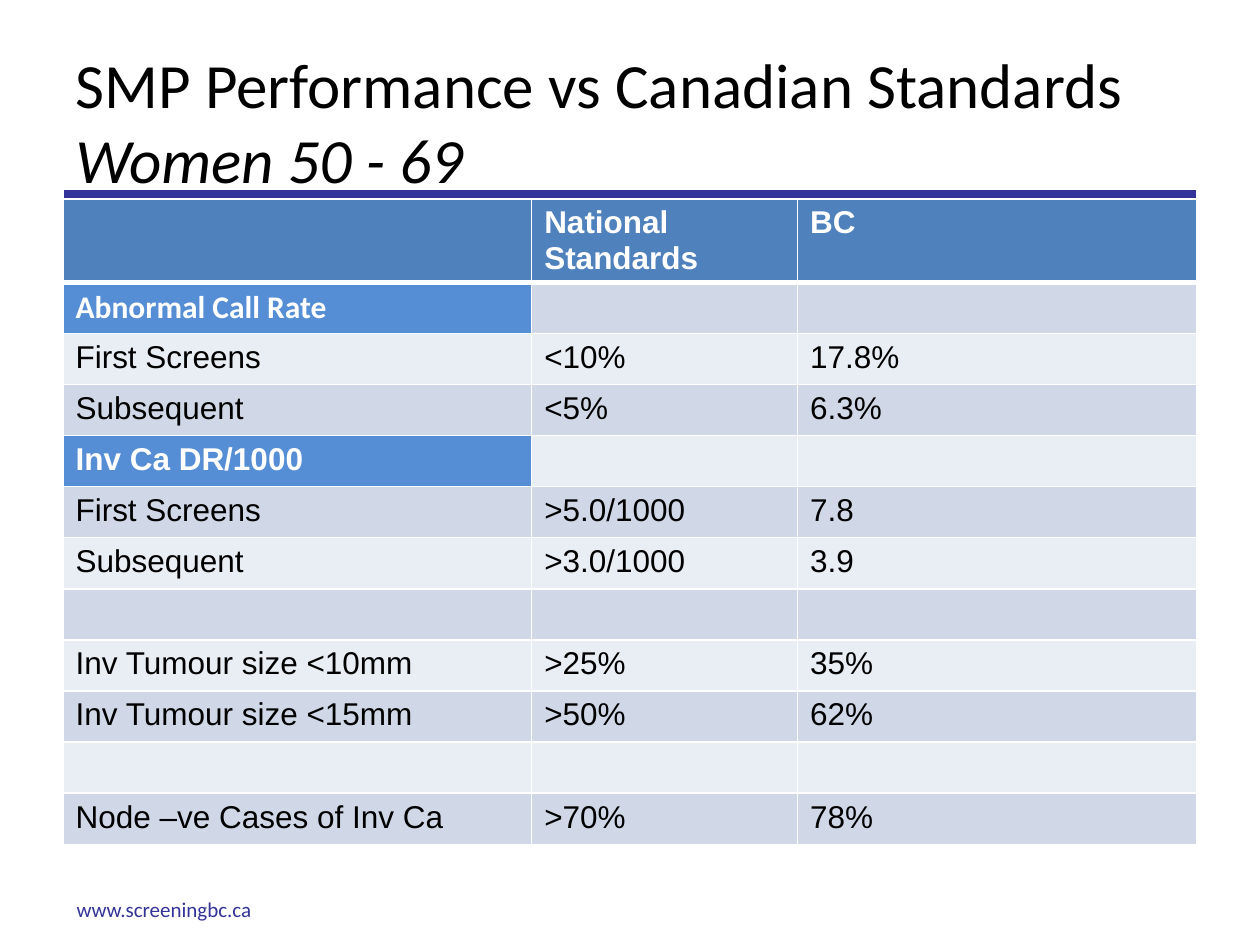
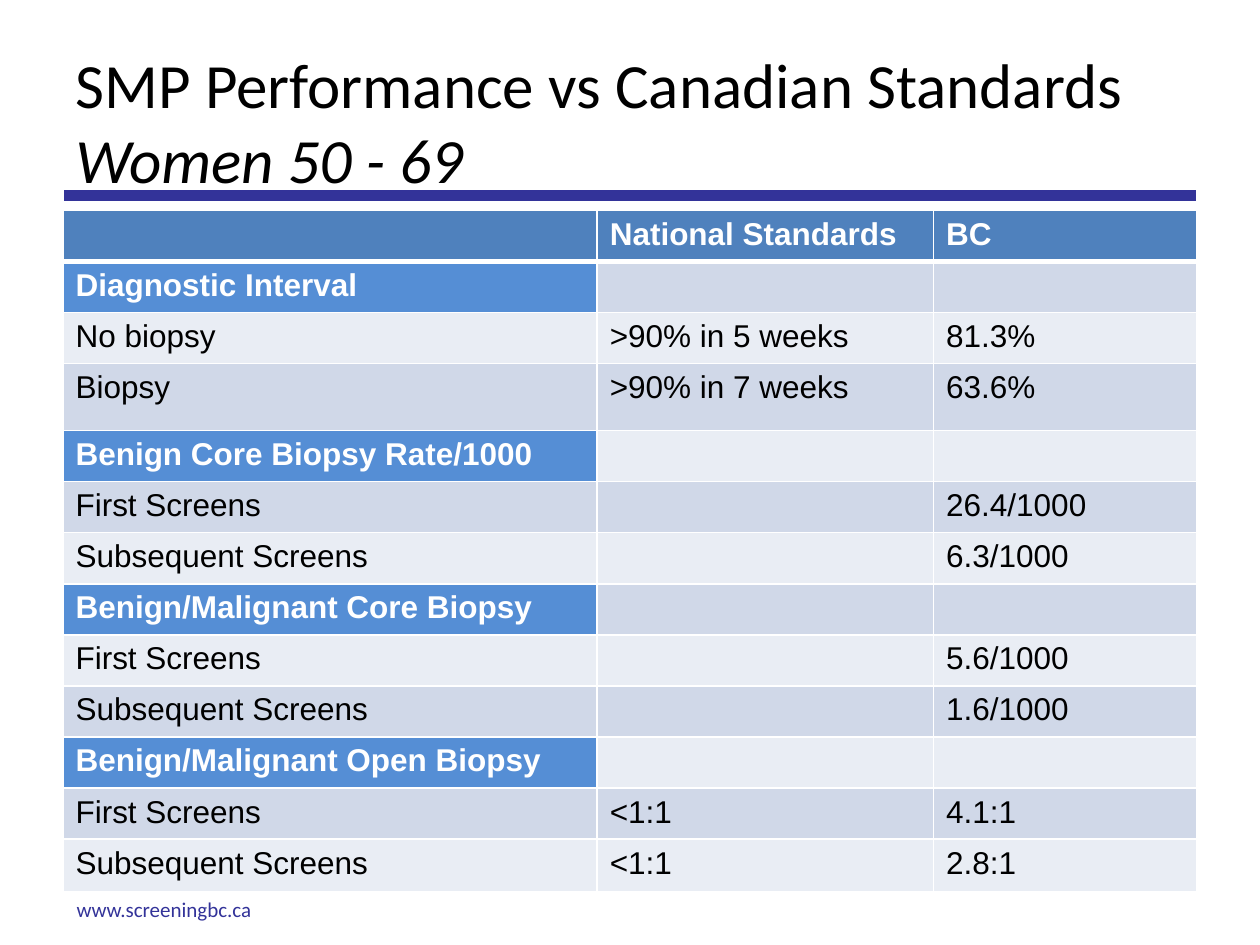
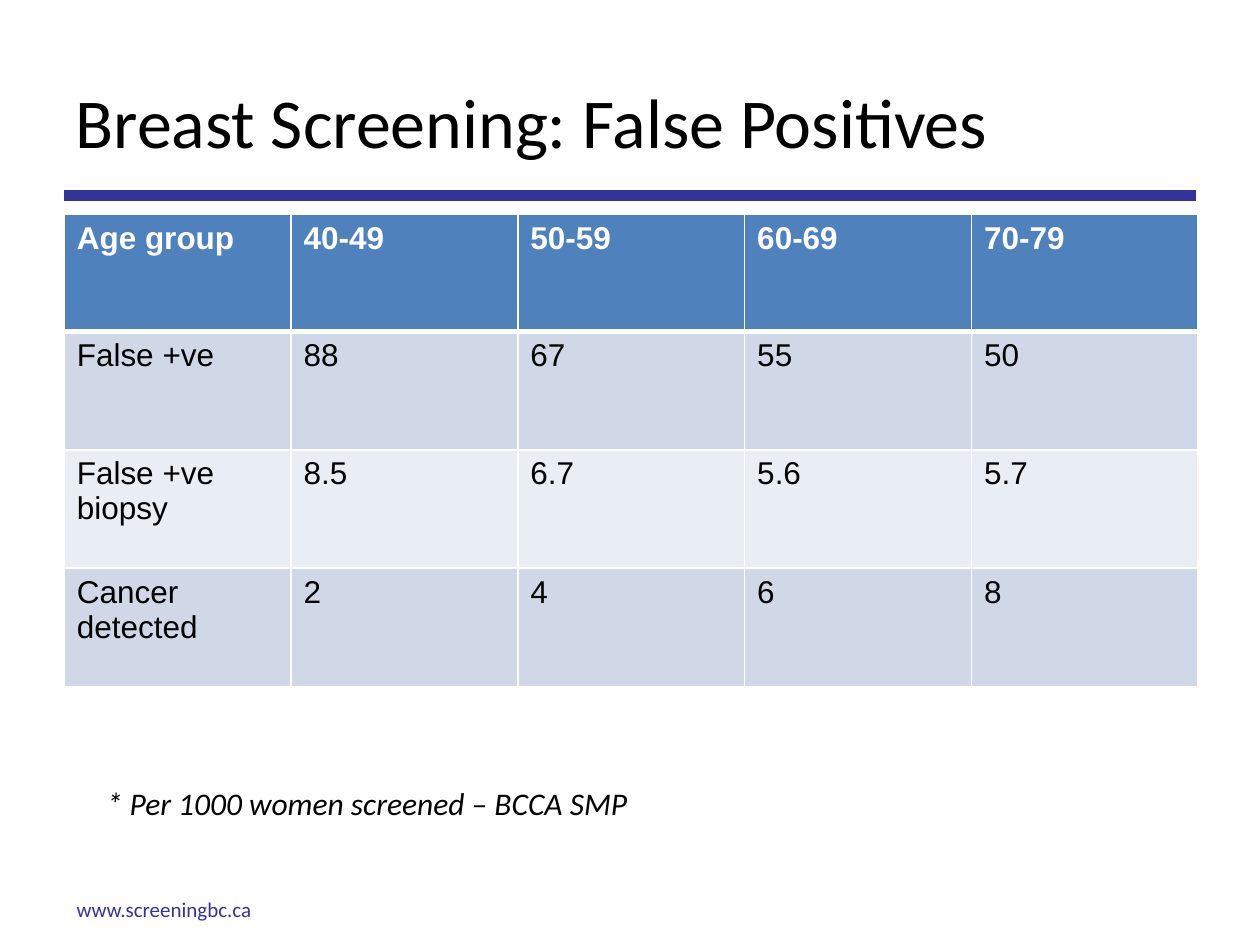
from itertools import zip_longest

from lxml.etree import SubElement
from pptx import Presentation
from pptx.dml.color import RGBColor
from pptx.enum.shapes import MSO_CONNECTOR
from pptx.enum.text import MSO_ANCHOR, MSO_AUTO_SIZE, PP_ALIGN
from pptx.oxml.ns import qn
from pptx.util import Inches, Pt

BLACK = RGBColor(0x00, 0x00, 0x00)
WHITE = RGBColor(0xFF, 0xFF, 0xFF)
INDIGO = RGBColor(0x33, 0x33, 0x99)
HEADER_BLUE = RGBColor(0x4F, 0x81, 0xBD)
SECTION_BLUE = RGBColor(0x55, 0x8E, 0xD5)
BANDS = (RGBColor(0xE9, 0xED, 0xF4), RGBColor(0xD0, 0xD8, 0xE8))

HEADING_FONT = "Calibri"
TABLE_FONT = "Arial"
ROW_HEIGHT = Inches(4.87) // 12
STANDARDS_TITLE = ("SMP Performance vs Canadian Standards ", "Women 50 - 69")
STANDARDS_HEADER = ["", "National Standards", "BC"]

RATE_ROWS = [
    STANDARDS_HEADER,
    ["Abnormal Call Rate"],
    ["First Screens", "<10%", "17.8%"],
    ["Subsequent", "<5%", "6.3%"],
    ["Inv Ca DR/1000"],
    ["First Screens", ">5.0/1000", "7.8"],
    ["Subsequent", ">3.0/1000", "3.9"],
    [],
    ["Inv Tumour size <10mm", ">25%", "35%"],
    ["Inv Tumour size <15mm", ">50%", "62%"],
    [],
    ["Node –ve Cases of Inv Ca", ">70%", "78%"],
]
BIOPSY_ROWS = [
    STANDARDS_HEADER,
    ["Diagnostic Interval"],
    ["No biopsy", ">90% in 5 weeks", "81.3%"],
    ["Biopsy", ">90% in 7 weeks", "63.6%"],
    ["Benign Core Biopsy Rate/1000"],
    ["First Screens", "", "26.4/1000"],
    ["Subsequent Screens", "", "6.3/1000"],
    ["Benign/Malignant Core Biopsy"],
    ["First Screens", "", "5.6/1000"],
    ["Subsequent Screens", "", "1.6/1000"],
    ["Benign/Malignant Open Biopsy"],
    ["First Screens", "<1:1", "4.1:1"],
    ["Subsequent Screens", "<1:1", "2.8:1"],
]
FALSE_POSITIVE_ROWS = [
    ["Age group", "40-49", "50-59", "60-69", "70-79"],
    ["False +ve", "88", "67", "55", "50"],
    ["False +ve\nbiopsy", "8.5", "6.7", "5.6", "5.7"],
    ["Cancer detected", "2", "4", "6", "8"],
]


def write(para, text, size=18, font=TABLE_FONT, color=BLACK, bold=False, italic=False):
    """Add one formatted span to a paragraph."""
    span = para.add_run()
    span.text = text
    span.font.size = Pt(size)
    span.font.name = font
    span.font.color.rgb = color
    span.font.bold = bold
    span.font.italic = italic


def add_label(page, text, left, top, width, height, **style):
    """Place a wrapping line of text in its own box."""
    box = page.shapes.add_textbox(left, top, width, height)
    box.text_frame.word_wrap = True
    write(box.text_frame.paragraphs[0], text, font=HEADING_FONT, **style)
    return box


def move_frame_to_master(deck, page):
    """Build the footer address and title rule, and put them on the master."""
    footer = add_label(page, "www.screeningbc.ca", Inches(0.51), Inches(7.07),
                       Inches(2.36), Inches(0.3), size=12, color=INDIGO)
    rule = page.shapes.add_connector(MSO_CONNECTOR.STRAIGHT, Inches(0.51), Inches(1.55),
                                     Inches(9.49), Inches(1.55))
    rule.line.color.rgb = INDIGO
    rule.line.width = Pt(6)
    SubElement(rule.element.spPr, qn("a:effectLst"))
    for shape in (footer, rule):
        deck.slide_master.element.cSld.spTree.append(shape.element)


def add_page(deck, title, subtitle="", size=36):
    """Add a page with a left-aligned title and an optional italic subtitle."""
    page = deck.slides.add_slide(deck.slide_layouts[5])
    box = page.shapes.title
    box.left, box.top, box.width, box.height = map(Inches, (0.5, 0.42, 9, 1.08))
    frame = box.text_frame
    frame.auto_size = MSO_AUTO_SIZE.NONE
    frame.vertical_anchor = MSO_ANCHOR.MIDDLE
    para = frame.paragraphs[0]
    para.alignment = PP_ALIGN.LEFT
    write(para, title, size=size, font=HEADING_FONT)
    if subtitle:
        write(para, subtitle, size=size, font=HEADING_FONT, italic=True)
    return page


def set_borders(cell, top, bottom):
    """Draw white cell borders, one point wide at the sides."""
    properties = cell._tc.get_or_add_tcPr()
    for side, width in (("L", 1), ("R", 1), ("T", top), ("B", bottom)):
        line = SubElement(properties, qn(f"a:ln{side}"), w=str(Pt(width)))
        fill = SubElement(line, qn("a:solidFill"))
        SubElement(fill, qn("a:srgbClr"), val=str(WHITE))


def fill_cell(cell, text, fill, **style):
    """Colour a cell and write each line of its text as a paragraph."""
    cell.fill.solid()
    cell.fill.fore_color.rgb = fill
    for index, line in enumerate(text.splitlines()):
        frame = cell.text_frame
        para = frame.add_paragraph() if index else frame.paragraphs[0]
        write(para, line, **style)


def add_banded_table(page, rows, left, top, widths, heights, section_fonts=None):
    """Add a banded table in which a row with a single entry is a section."""
    table = page.shapes.add_table(len(rows), len(widths), left, top,
                                  sum(widths), sum(heights)).table
    for column, width in zip(table.columns, widths):
        column.width = width
    for index, (row, height) in enumerate(zip(rows, heights)):
        table.rows[index].height = height
        for place, (cell, text) in enumerate(
                zip_longest(table.rows[index].cells, row, fillvalue="")):
            set_borders(cell, top=3 if index == 1 else 1, bottom=3 if index == 0 else 1)
            if index == 0:
                fill_cell(cell, text, HEADER_BLUE, color=WHITE, bold=True)
            elif len(row) == 1 and place == 0:
                font = (section_fonts or {}).get(text, TABLE_FONT)
                fill_cell(cell, text, SECTION_BLUE, font=font, color=WHITE, bold=True)
            else:
                fill_cell(cell, text, BANDS[index % 2])


def add_rates_page(deck):
    """Build the page of call and detection rates."""
    page = add_page(deck, *STANDARDS_TITLE)
    add_banded_table(page, RATE_ROWS, Inches(0.5), Inches(1.58),
                     [Inches(width) for width in (3.72, 2.11, 3.17)],
                     [Inches(0.66)] + [ROW_HEIGHT] * (len(RATE_ROWS) - 1),
                     section_fonts={"Abnormal Call Rate": HEADING_FONT})
    return page


def add_biopsy_page(deck):
    """Build the page of diagnostic intervals and biopsy rates."""
    page = add_page(deck, *STANDARDS_TITLE)
    heights = [ROW_HEIGHT] * len(BIOPSY_ROWS)
    heights[3] = Inches(0.53)
    heights[-1] = Inches(0.42)
    add_banded_table(page, BIOPSY_ROWS, Inches(0.5), Inches(1.67),
                     [Inches(width) for width in (4.24, 2.67, 2.09)], heights)


def add_false_positives_page(deck):
    """Build the page of false positives by age group."""
    page = add_page(deck, "Breast Screening: False Positives", size=40)
    add_banded_table(page, FALSE_POSITIVE_ROWS, Inches(0.51), Inches(1.7),
                     [Inches(1.8)] * 5, [Inches(0.93)] + [Inches(0.94)] * 3)
    add_label(page, "* Per 1000 women screened – BCCA SMP", Inches(0.75), Inches(6.17),
              Inches(5.67), Inches(0.4), italic=True)


def main():
    """Build and save the deck."""
    deck = Presentation()
    deck.slide_width, deck.slide_height = Inches(10), Inches(7.5)
    move_frame_to_master(deck, add_rates_page(deck))
    add_biopsy_page(deck)
    add_false_positives_page(deck)
    deck.save("out.pptx")


if __name__ == "__main__":
    main()
